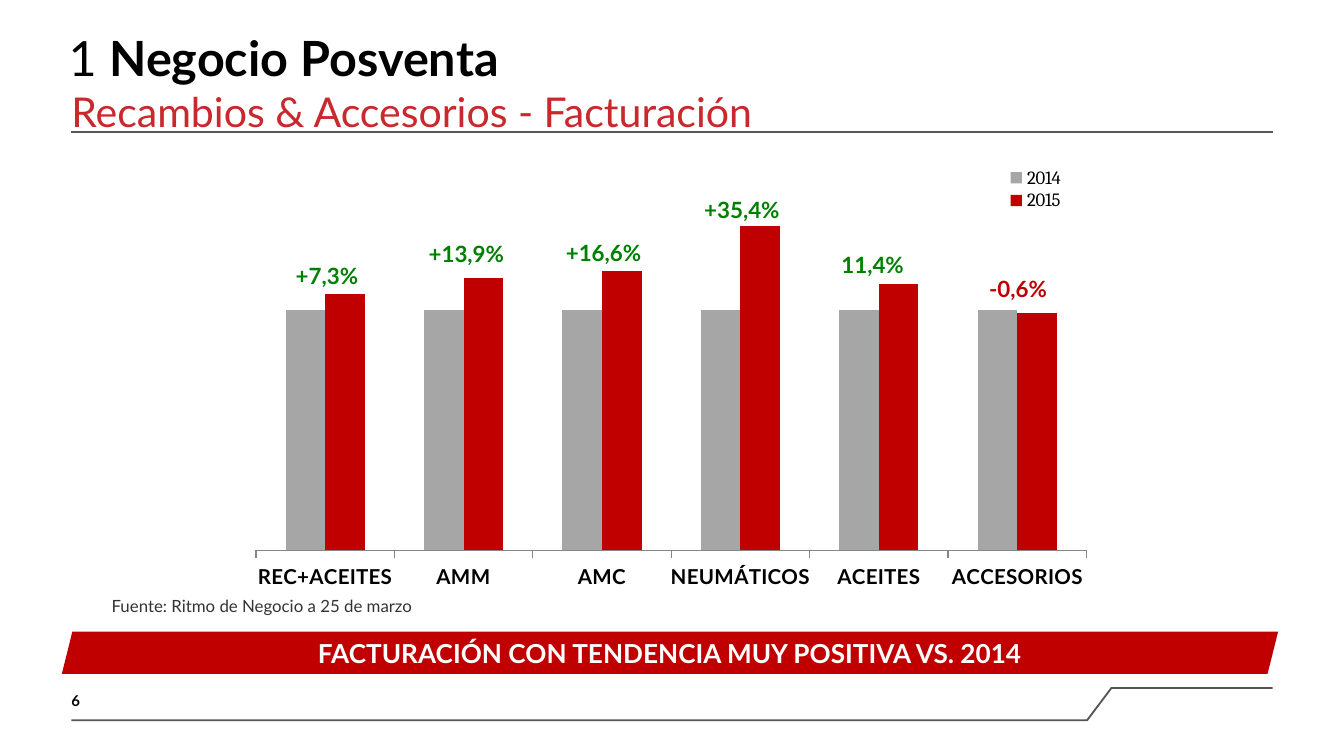
from collections import namedtuple

from lxml import etree
from pptx import Presentation
from pptx.chart.data import CategoryChartData
from pptx.dml.color import RGBColor
from pptx.enum.chart import XL_CHART_TYPE, XL_LEGEND_POSITION, XL_TICK_LABEL_POSITION, XL_TICK_MARK
from pptx.enum.shapes import MSO_CONNECTOR, MSO_SHAPE
from pptx.enum.text import MSO_ANCHOR, PP_ALIGN
from pptx.oxml.ns import qn
from pptx.util import Pt

BLACK = RGBColor(0x00, 0x00, 0x00)
WHITE = RGBColor(0xFF, 0xFF, 0xFF)
CHARCOAL = RGBColor(0x33, 0x33, 0x33)
RULE_GRAY = RGBColor(0x56, 0x56, 0x56)
AXIS_GRAY = RGBColor(0x86, 0x86, 0x86)
BAR_GRAY = RGBColor(0xA6, 0xA6, 0xA6)
RED = RGBColor(0xC0, 0x00, 0x00)
TITLE_RED = RGBColor(0xC9, 0x28, 0x2D)
GREEN = RGBColor(0x00, 0x80, 0x00)

COLUMNS = XL_CHART_TYPE.COLUMN_CLUSTERED
LEGEND_RIGHT = XL_LEGEND_POSITION.RIGHT
TICK_OUTSIDE = XL_TICK_MARK.OUTSIDE
LABELS_LOW = XL_TICK_LABEL_POSITION.LOW
STRAIGHT = MSO_CONNECTOR.STRAIGHT
PARALLELOGRAM = MSO_SHAPE.PARALLELOGRAM
TOP, MIDDLE, BOTTOM = MSO_ANCHOR.TOP, MSO_ANCHOR.MIDDLE, MSO_ANCHOR.BOTTOM
CENTER = PP_ALIGN.CENTER

FONT = "Lato"
LEGEND_FONT = "Cambria"
CATEGORIES = ["REC+ACEITES", "AMM", "AMC", "NEUMÁTICOS", "ACEITES", "ACCESORIOS"]
SERIES = [
    ("2014", [74] * len(CATEGORIES), BAR_GRAY),
    ("2015", [79, 84, 86, 100, 82, 73], RED),
]
CHANGES = [
    ("+7,3%", 31, 54, GREEN),
    ("+13,9%", 102.2, 42.5, GREEN),
    ("+16,6%", 175.7, 41.8, GREEN),
    ("+35,4%", 249.8, 18.7, GREEN),
    ("11,4%", 323.3, 48.2, GREEN),
    ("-0,6%", 402.5, 61.2, RED),
]

Box = namedtuple("Box", "left top width height")


def points(box):
    """Return the four sides of a box as lengths."""
    return [Pt(side) for side in box]


def style_font(font, size, color, bold=False, name=FONT):
    """Set the face, size, colour and weight of a font."""
    font.name = name
    font.size = Pt(size)
    font.bold = bold
    font.color.rgb = color


def set_frame(frame, anchor, margin=0):
    """Set the wrapping, anchor and equal margins of a text frame."""
    frame.word_wrap = True
    frame.vertical_anchor = anchor
    frame.margin_left = frame.margin_right = Pt(margin)
    frame.margin_top = frame.margin_bottom = Pt(margin)


def add_text(page, box, text, size, color, bold=False, anchor=TOP):
    """Add a one-line text box and return its paragraph."""
    frame = page.shapes.add_textbox(*points(box)).text_frame
    set_frame(frame, anchor)
    para = frame.paragraphs[0]
    para.text = text
    style_font(para.runs[0].font, size, color, bold)
    return para


def add_heading(page, box):
    """Place the title, the subtitle and the rule below them."""
    left, top, width, height = box
    title = add_text(page, Box(left - 1.4, top, width, 25.2), "1 ", 26, BLACK)
    span = title.add_run()
    span.text = "Negocio Posventa"
    style_font(span.font, 26, BLACK, True)
    add_text(page, Box(left, top + 31, width, 25.2),
             "Recambios & Accesorios - Facturación", 22, TITLE_RED)
    bottom = top + height
    rule = page.shapes.add_connector(
        STRAIGHT, Pt(left), Pt(bottom), Pt(left + width), Pt(bottom))
    rule.line.color.rgb = RULE_GRAY
    rule.line.width = Pt(1)
    etree.SubElement(rule._element.spPr, qn("a:effectLst"))


def set_layout(element, x, y, width, height, inner=False):
    """Fix the place of a chart part as fractions of the chart."""
    for old in element.findall(qn("c:layout")):
        element.remove(old)
    layout = etree.Element(qn("c:layout"))
    manual = etree.SubElement(layout, qn("c:manualLayout"))
    values = [("layoutTarget", "inner")] if inner else []
    values += [("xMode", "edge"), ("yMode", "edge"),
               ("x", x), ("y", y), ("w", width), ("h", height)]
    for tag, value in values:
        etree.SubElement(manual, qn(f"c:{tag}")).set("val", str(value))
    position = element.find(qn("c:legendPos"))
    if position is None:
        element.insert(0, layout)
    else:
        position.addnext(layout)


def add_sales_chart(page, box):
    """Place the column chart and the change label above each category."""
    data = CategoryChartData()
    data.categories = CATEGORIES
    for name, values, _ in SERIES:
        data.add_series(name, values)
    chart = page.shapes.add_chart(COLUMNS, *points(box), data).chart
    style_font(chart.font, 10, BLACK, name=LEGEND_FONT)
    chart.has_title = False
    chart.has_legend = True
    chart.legend.position = LEGEND_RIGHT
    chart.legend.include_in_layout = False
    set_layout(chart.legend._element, 0.88, 0.01, 0.09, 0.11)

    plot = chart.plots[0]
    plot.gap_width = 150
    plot.overlap = 0
    plot.vary_by_categories = False
    set_layout(chart._chartSpace.chart.plotArea, 0.021, 0.014, 0.963, 0.894, inner=True)
    for series, (_, _, color) in zip(plot.series, SERIES):
        series.format.fill.solid()
        series.format.fill.fore_color.rgb = color
        series.invert_if_negative = False

    value_axis = chart.value_axis
    value_axis.minimum_scale = 0
    value_axis.maximum_scale = 118
    value_axis.has_major_gridlines = False
    value_axis.visible = False
    category_axis = chart.category_axis
    category_axis.major_tick_mark = TICK_OUTSIDE
    category_axis.tick_label_position = LABELS_LOW
    category_axis.format.line.color.rgb = AXIS_GRAY
    category_axis.format.line.width = Pt(0.75)
    style_font(category_axis.tick_labels.font, 11, BLACK, True)

    for text, x, y, color in CHANGES:
        add_text(page, Box(box.left + x, box.top + y, 51, 22.3), text, 12, color, True)


def add_message(page, box):
    """Place the slanted banner with the conclusion."""
    banner = page.shapes.add_shape(PARALLELOGRAM, *points(box))
    banner.shadow.inherit = False
    banner.fill.solid()
    banner.fill.fore_color.rgb = RED
    banner.line.fill.background()
    set_frame(banner.text_frame, MIDDLE, 1.44)
    para = banner.text_frame.paragraphs[0]
    para.text = "FACTURACIÓN CON TENDENCIA MUY POSITIVA VS. 2014"
    para.alignment = CENTER
    style_font(para.runs[0].font, 14, WHITE, True)


def add_footer(page, box):
    """Place the stepped line and the page number."""
    left, top, width, height = box
    right, bottom = left + width, top + height
    builder = page.shapes.build_freeform(Pt(left), Pt(bottom))
    corners = [(right - 99.4, bottom), (right - 86.4, top), (right, top)]
    builder.add_line_segments([(Pt(x), Pt(y)) for x, y in corners], close=False)
    step = builder.convert_to_shape()
    step.shadow.inherit = False
    step.fill.background()
    step.line.color.rgb = RULE_GRAY
    step.line.width = Pt(1)
    add_text(page, Box(left, top, 26.6, 11.5), "6", 8, BLACK, True, BOTTOM)


def main():
    """Build the slide and save the deck."""
    deck = Presentation()
    deck.slide_width, deck.slide_height = Pt(720), Pt(405)
    page = deck.slides.add_slide(deck.slide_layouts[6])
    add_heading(page, Box(38.2, 15.1, 643.6, 55.4))
    add_footer(page, Box(38.2, 368.6, 643.6, 17.3))
    add_text(page, Box(59.8, 316.1, 251.3, 16.6),
             "Fuente: Ritmo de Negocio a 25 de marzo", 9, CHARCOAL, anchor=MIDDLE)
    add_message(page, Box(33.1, 338.4, 651.6, 22.6))
    add_sales_chart(page, Box(127.4, 86.4, 462.2, 229.7))
    deck.save("out.pptx")


if __name__ == "__main__":
    main()
